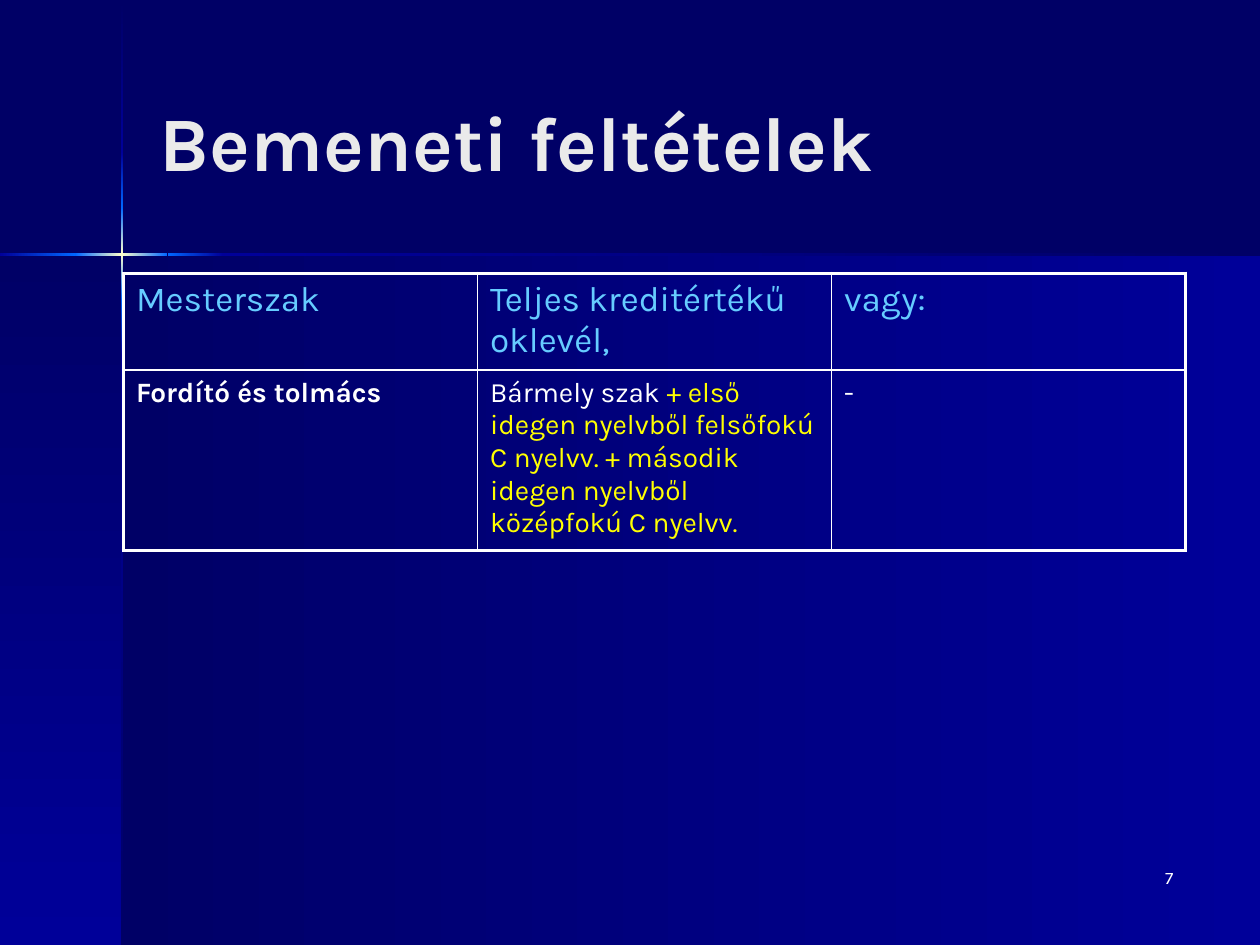
"""Build the slide on entry requirements: glowing cross backdrop, title and table."""
from pptx import Presentation
from pptx.dml.color import RGBColor
from pptx.enum.shapes import MSO_SHAPE
from pptx.enum.text import MSO_ANCHOR, PP_ALIGN
from pptx.oxml import parse_xml
from pptx.oxml.ns import nsdecls
from pptx.util import Inches, Pt

RECT = MSO_SHAPE.RECTANGLE
TOP, MIDDLE = MSO_ANCHOR.TOP, MSO_ANCHOR.MIDDLE
LEFT, RIGHT = PP_ALIGN.LEFT, PP_ALIGN.RIGHT

FONT = "Karla"
COLORS = {
    "deep": "000066", "navy": "000099", "bright": "0066FF", "glow": "FFFFCC",
    "white": "FFFFFF", "title": "EAEAEA", "head": "66CCFF", "accent": "FFFF00",
}
TITLE = "Bemeneti feltételek"
PAGE = "7"
HEAD = {"size": 20, "color": "head"}
BODY = {"size": 16}
ROWS = [
    [[("Mesterszak", HEAD)],
     [("Teljes kreditértékű oklevél,", HEAD)],
     [("vagy:", HEAD)]],
    [[("Fordító és tolmács", {**BODY, "bold": True})],
     [("Bármely szak ", BODY),
      ("+ első idegen nyelvből felsőfokú C nyelvv. + második idegen nyelvből "
       "középfokú C nyelvv.", {**BODY, "color": "accent"})],
     [("-", BODY)]],
]

W, H = 10, 7.5
CROSS_X, CROSS_Y, BEAM = 0.97, 2.02, 0.02
BEAM_X = [(0, "navy"), (0.6, "bright"), (1.33, "bright"), (1.77, "navy"), (W, "deep")]
BEAM_Y = [(0, "deep"), (1.21, "navy"), (1.65, "bright"), (2.38, "bright"),
          (2.82, "navy"), (H, "deep")]
TABLE_X, TABLE_Y, COL_W = 0.98, 2.17, 2.81
ROW_H = [0.75, 1.4]
OUTER, INNER = 2.25, 1


def add_text(p, text, size=16, color="white", bold=False, align=LEFT):
    p.alignment = align
    r = p.add_run()
    r.text = text
    r.font.name, r.font.size, r.font.bold = FONT, Pt(size), bold
    r.font.color.rgb = RGBColor.from_string(COLORS[color])


def add_box(s, box, text, anchor=TOP, **fmt):
    tf = s.shapes.add_textbox(*map(Inches, box)).text_frame
    tf.word_wrap = True
    tf.vertical_anchor = anchor
    add_text(tf.paragraphs[0], text, **fmt)


def add_gradient(s, box, names, angle):
    sp = s.shapes.add_shape(RECT, *map(Inches, box))
    sp.shadow.inherit = False
    sp.line.fill.background()
    stops = "".join(
        f'<a:gs pos="{100000 * i // (len(names) - 1)}"><a:srgbClr val="{COLORS[n]}"/></a:gs>'
        for i, n in enumerate(names))
    sp._element.spPr.prstGeom.addnext(parse_xml(
        f'<a:gradFill {nsdecls("a")} rotWithShape="1"><a:gsLst>{stops}</a:gsLst>'
        f'<a:lin ang="{angle * 60000}" scaled="0"/></a:gradFill>'))


def add_beam(s, points, vertical):
    for (start, first), (end, last) in zip(points, points[1:]):
        names = [first, "glow", last] if first == last else [first, last]
        if vertical:
            box = (CROSS_X - BEAM / 2, start, BEAM, end - start)
        else:
            box = (start, CROSS_Y - BEAM / 2, end - start, BEAM)
        add_gradient(s, box, names, 90 if vertical else 0)


def set_borders(cell, widths):
    tc_pr = cell._tc.get_or_add_tcPr()
    for i, (side, width) in enumerate(widths.items()):
        tc_pr.insert(i, parse_xml(
            f'<a:ln{side} {nsdecls("a")} w="{Pt(width)}"><a:solidFill>'
            f'<a:srgbClr val="{COLORS["white"]}"/></a:solidFill></a:ln{side}>'))


def add_table(s):
    n_rows, n_cols = len(ROWS), len(ROWS[0])
    table = s.shapes.add_table(
        n_rows, n_cols, Inches(TABLE_X), Inches(TABLE_Y),
        Inches(COL_W * n_cols), Inches(sum(ROW_H))).table
    table.first_row = table.horz_banding = False
    for col in table.columns:
        col.width = Inches(COL_W)
    for i, row in enumerate(ROWS):
        table.rows[i].height = Inches(ROW_H[i])
        for j, runs in enumerate(row):
            cell = table.cell(i, j)
            cell.fill.background()
            edges = {"L": j == 0, "R": j == n_cols - 1, "T": i == 0, "B": i == n_rows - 1}
            set_borders(cell, {k: OUTER if edge else INNER for k, edge in edges.items()})
            for text, fmt in runs:
                add_text(cell.text_frame.paragraphs[0], text, **fmt)


def main():
    prs = Presentation()
    prs.slide_width, prs.slide_height = Inches(W), Inches(H)
    s = prs.slides.add_slide(prs.slide_layouts[6])
    s.background.fill.solid()
    s.background.fill.fore_color.rgb = RGBColor.from_string(COLORS["deep"])
    add_gradient(s, (CROSS_X, CROSS_Y, W - CROSS_X, H - CROSS_Y), ["deep", "navy"], 0)
    add_gradient(s, (0, CROSS_Y, CROSS_X, H - CROSS_Y), ["deep", "navy"], 90)
    add_beam(s, BEAM_Y, vertical=True)
    add_beam(s, BEAM_X, vertical=False)
    add_box(s, (7.33, 6.83, 2.08, 0.5), PAGE, size=10, align=RIGHT)
    add_box(s, (1.17, 0.33, 8.25, 1.57), TITLE, anchor=MIDDLE, size=44, color="title", bold=True)
    add_table(s)
    prs.save("out.pptx")


if __name__ == "__main__":
    main()
